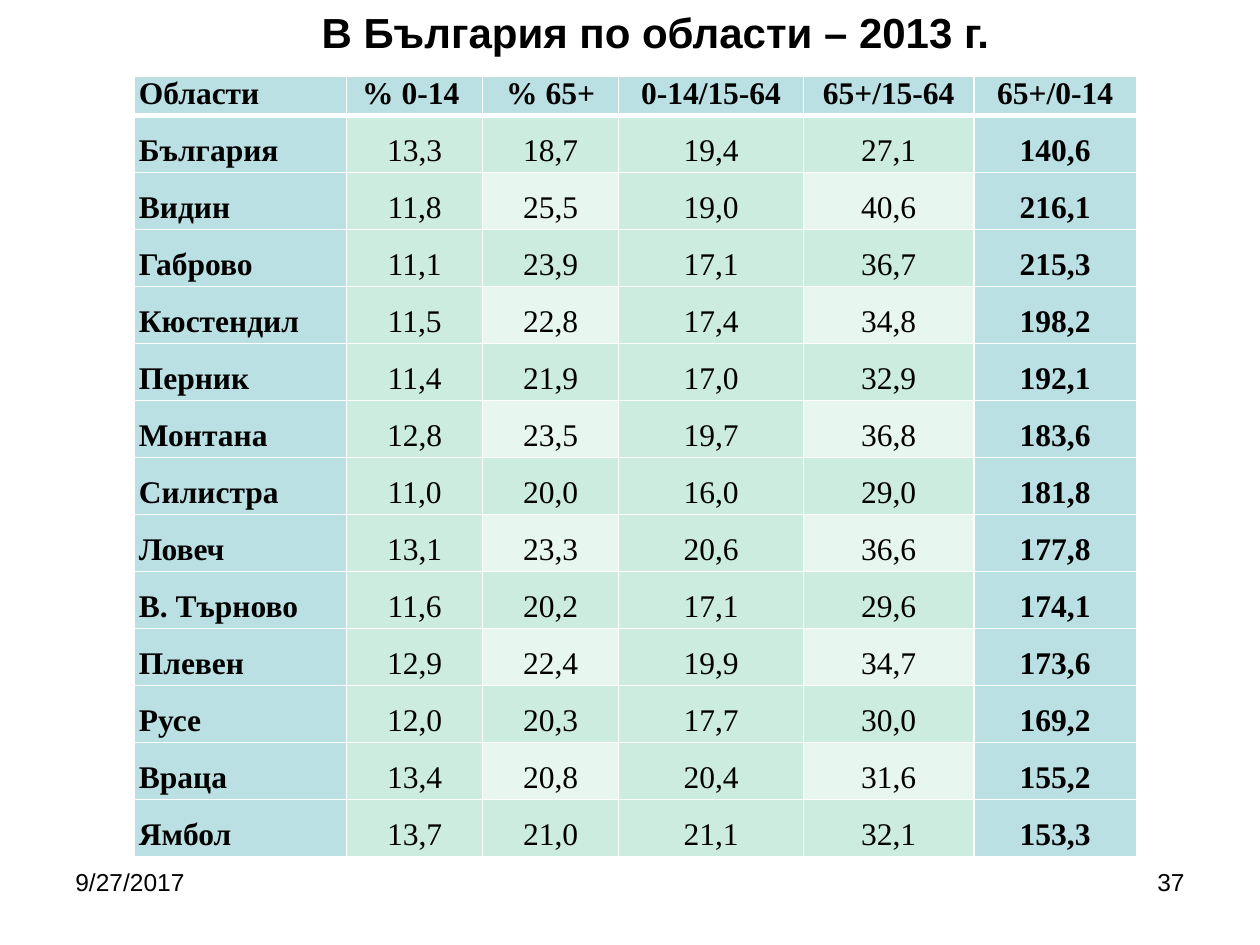
import pptx
import pptx.dml.color
import pptx.enum.text
import pptx.oxml
import pptx.oxml.ns
import pptx.util
from pptx.util import Cm

BLACK = pptx.dml.color.RGBColor(0x00, 0x00, 0x00)
WHITE = pptx.dml.color.RGBColor(0xFF, 0xFF, 0xFF)
BLUE = pptx.dml.color.RGBColor(0xBB, 0xE0, 0xE3)
GREEN = pptx.dml.color.RGBColor(0xCB, 0xEC, 0xDE)
PALE_GREEN = pptx.dml.color.RGBColor(0xE7, 0xF6, 0xEF)

LEFT = pptx.enum.text.PP_ALIGN.LEFT
CENTER = pptx.enum.text.PP_ALIGN.CENTER
RIGHT = pptx.enum.text.PP_ALIGN.RIGHT

COLUMN_WIDTHS = [4.29, 2.74, 2.74, 3.73, 3.43, 3.28]
HEADER_HEIGHT = 0.8
ROW_HEIGHT = 1.15

REGIONS = [
    ["Области", "% 0-14 ", "% 65+", "0-14/15-64", "65+/15-64", "65+/0-14"],
    ["България", "13,3", "18,7", "19,4", "27,1", "140,6"],
    ["Видин", "11,8", "25,5", "19,0", "40,6", "216,1"],
    ["Габрово", "11,1", "23,9", "17,1", "36,7", "215,3"],
    ["Кюстендил", "11,5", "22,8", "17,4", "34,8", "198,2"],
    ["Перник", "11,4", "21,9", "17,0", "32,9", "192,1"],
    ["Монтана", "12,8", "23,5", "19,7", "36,8", "183,6"],
    ["Силистра", "11,0", "20,0", "16,0", "29,0", "181,8"],
    ["Ловеч", "13,1", "23,3", "20,6", "36,6", "177,8"],
    ["В. Търново", "11,6", "20,2", "17,1", "29,6", "174,1"],
    ["Плевен", "12,9", "22,4", "19,9", "34,7", "173,6"],
    ["Русе", "12,0", "20,3", "17,7", "30,0", "169,2"],
    ["Враца", "13,4", "20,8", "20,4", "31,6", "155,2"],
    ["Ямбол", "13,7", "21,0", "21,1", "32,1", "153,3"],
]


class SlideBuilder:
    text_font = "Arial"
    table_font = "Times New Roman"
    table_size = 18

    def __init__(self, page):
        self.page = page

    def format_text(self, para, font, size, bold, align):
        para.alignment = align
        for span in para.runs:
            span.font.name = font
            span.font.size = pptx.util.Pt(size)
            span.font.bold = bold
            span.font.color.rgb = BLACK

    def add_text(self, text, left, top, width, height, size, align, bold=False):
        box = self.page.shapes.add_textbox(Cm(left), Cm(top), Cm(width), Cm(height))
        box.text_frame.word_wrap = True
        box.text_frame.text = text
        self.format_text(box.text_frame.paragraphs[0], self.text_font, size, bold, align)

    def add_border(self, cell, side, points):
        line = pptx.oxml.parse_xml(
            f'<a:{side} {pptx.oxml.ns.nsdecls("a")} w="{pptx.util.Pt(points)}">'
            f'<a:solidFill><a:srgbClr val="{WHITE}"/></a:solidFill></a:{side}>'
        )
        cell._tc.get_or_add_tcPr().append(line)

    def fill_cell(self, cell, text, row, column):
        is_header = row == 0
        is_edge = column in (0, len(COLUMN_WIDTHS) - 1)

        cell.margin_left = cell.margin_right = Cm(0.1)
        cell.margin_top = cell.margin_bottom = 0
        cell.text_frame.text = text
        para = cell.text_frame.paragraphs[0]
        self.format_text(para, self.table_font, self.table_size,
                         is_header or is_edge, CENTER if column else LEFT)
        if not is_header:
            para.line_spacing = 1.5

        # A thick rule separates the header from the body
        self.add_border(cell, "lnL", 1)
        self.add_border(cell, "lnR", 1)
        self.add_border(cell, "lnT", 3 if row == 1 else 1)
        self.add_border(cell, "lnB", 3 if is_header else 1)

        # Outer columns and header are blue, two inner columns are banded
        cell.fill.solid()
        if is_header or is_edge:
            cell.fill.fore_color.rgb = BLUE
        elif row % 2 == 0 and column % 2 == 0:
            cell.fill.fore_color.rgb = PALE_GREEN
        else:
            cell.fill.fore_color.rgb = GREEN

    def add_table(self, rows, left, top):
        heights = [HEADER_HEIGHT] + [ROW_HEIGHT] * (len(rows) - 1)
        table = self.page.shapes.add_table(
            len(rows), len(COLUMN_WIDTHS), Cm(left), Cm(top),
            Cm(sum(COLUMN_WIDTHS)), Cm(sum(heights))).table
        for column, width in zip(table.columns, COLUMN_WIDTHS):
            column.width = Cm(width)
        for row, height in zip(table.rows, heights):
            row.height = Cm(height)
        for row, values in enumerate(rows):
            for column, value in enumerate(values):
                self.fill_cell(table.cell(row, column), value, row, column)


def main():
    deck = pptx.Presentation()
    deck.slide_width = Cm(25.4)
    deck.slide_height = Cm(19.05)
    builder = SlideBuilder(deck.slides.add_slide(deck.slide_layouts[6]))

    # Age structure by region
    builder.add_table(REGIONS, 2.7, 1.53)

    # Footer: date and page number
    builder.add_text("9/27/2017", 1.27, 17.35, 5.92, 1.32, 14, LEFT)
    builder.add_text("37", 18.21, 17.35, 5.92, 1.32, 14, RIGHT)

    # Title
    builder.add_text("В България по области – 2013 г.", 1.3, 0, 23.83, 1.27, 24, CENTER, bold=True)

    deck.save("out.pptx")


if __name__ == "__main__":
    main()
